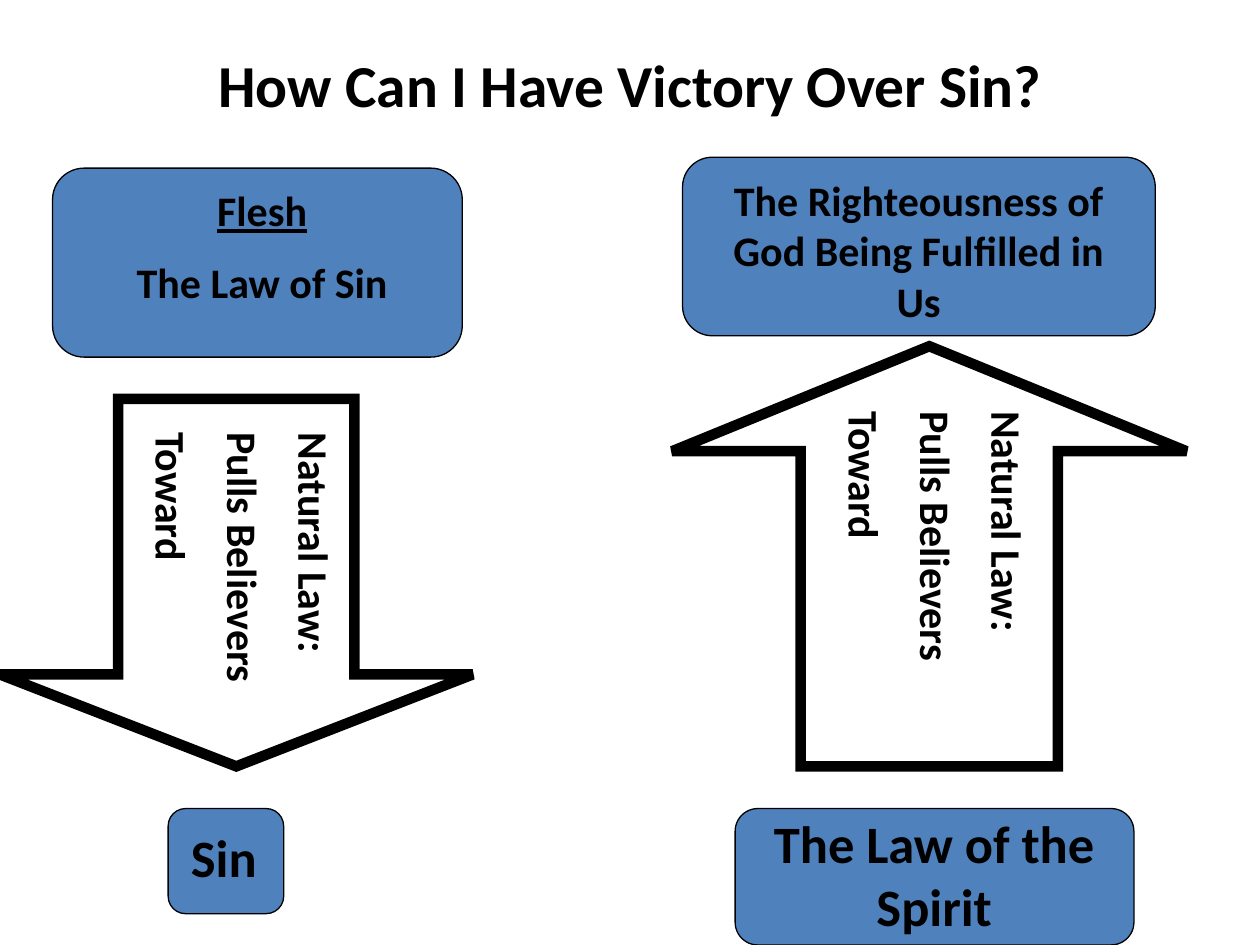
from lxml import etree
from pptx import Presentation
from pptx.dml.color import RGBColor
from pptx.enum.shapes import MSO_SHAPE
from pptx.enum.text import MSO_ANCHOR, PP_ALIGN
from pptx.oxml.ns import qn
from pptx.util import Cm, Pt

BOX = MSO_SHAPE.FLOWCHART_ALTERNATE_PROCESS
DOWN = MSO_SHAPE.DOWN_ARROW
UP = MSO_SHAPE.UP_ARROW
MID = MSO_ANCHOR.MIDDLE
TOP = MSO_ANCHOR.TOP
LEFT = PP_ALIGN.LEFT
MIDDLE = PP_ALIGN.CENTER


def color(code):
    return RGBColor.from_string(code)


class Slide:
    font = "Calibri"
    ink = "000000"
    blue = "4F81BD"

    def __init__(self, deck):
        self.page = deck.slides.add_slide(deck.slide_layouts[6])

    def shape(self, kind, area, width):
        item = self.page.shapes.add_shape(kind, *map(Cm, area))
        item.shadow.inherit = False
        item.line.color.rgb = color(self.ink)
        item.line.width = Pt(width)
        return item

    def box(self, *area):
        item = self.shape(BOX, area, 0.75)
        item.fill.solid()
        item.fill.fore_color.rgb = color(self.blue)

    def arrow(self, kind, *area):
        item = self.shape(kind, area, 6)
        item.adjustments[0] = 0.5
        item.adjustments[1] = 0.25
        item.fill.background()
        join = etree.SubElement(item.line._get_or_add_ln(), qn("a:miter"))
        join.set("lim", "800000")

    def text(self, area, lines, size=24, align=MIDDLE, anchor=TOP, under=()):
        item = self.page.shapes.add_textbox(*map(Cm, area))
        frame = item.text_frame
        frame.word_wrap = True
        frame.vertical_anchor = anchor
        for i, line in enumerate(lines):
            para = frame.add_paragraph() if i else frame.paragraphs[0]
            para.alignment = align
            para.space_before = Pt(size / 2 if i else 0)
            run = para.add_run()
            run.text = line
            run.font.name = self.font
            run.font.size = Pt(size)
            run.font.bold = True
            run.font.underline = line in under
            run.font.color.rgb = color(self.ink)
        return frame

    def pull(self, *area):
        lines = ["Natural Law:", "Pulls Believers", "Toward"]
        frame = self.text(area, lines, align=LEFT)
        frame.word_wrap = False
        frame._txBody.bodyPr.set("vert", "eaVert")


def main():
    deck = Presentation()
    deck.slide_width = Cm(25.4)
    deck.slide_height = Cm(19.05)
    slide = Slide(deck)

    slide.text((0, 0.85, 25.4, 1.69), ["How Can I Have Victory Over Sin?"],
               34, anchor=MID)

    slide.box(1.06, 3.39, 8.26, 3.81)
    slide.text((1.9, 3.6, 6.77, 2.8), ["Flesh", "The Law of Sin"],
               under=["Flesh"])
    slide.arrow(DOWN, 0, 8.04, 9.53, 7.41)
    slide.pull(3.6, 8.47, 3.39, 5.5)
    slide.box(3.39, 16.3, 2.33, 2.12)
    slide.text((3.6, 16.51, 2.33, 1.55), ["Sin"], 30, LEFT)

    slide.box(13.76, 3.17, 9.53, 3.6)
    slide.text((14.18, 3.39, 8.68, 3.3),
               ["The Righteousness of God Being Fulfilled in Us"])
    slide.arrow(UP, 13.55, 6.98, 10.37, 8.47)
    slide.pull(17.36, 8.04, 3.6, 6.98)
    slide.box(14.82, 16.3, 8.04, 2.75)
    slide.text((14.18, 16.23, 9.31, 2.82), ["The Law of the Spirit"], 30)

    deck.save("out.pptx")


if __name__ == "__main__":
    main()
